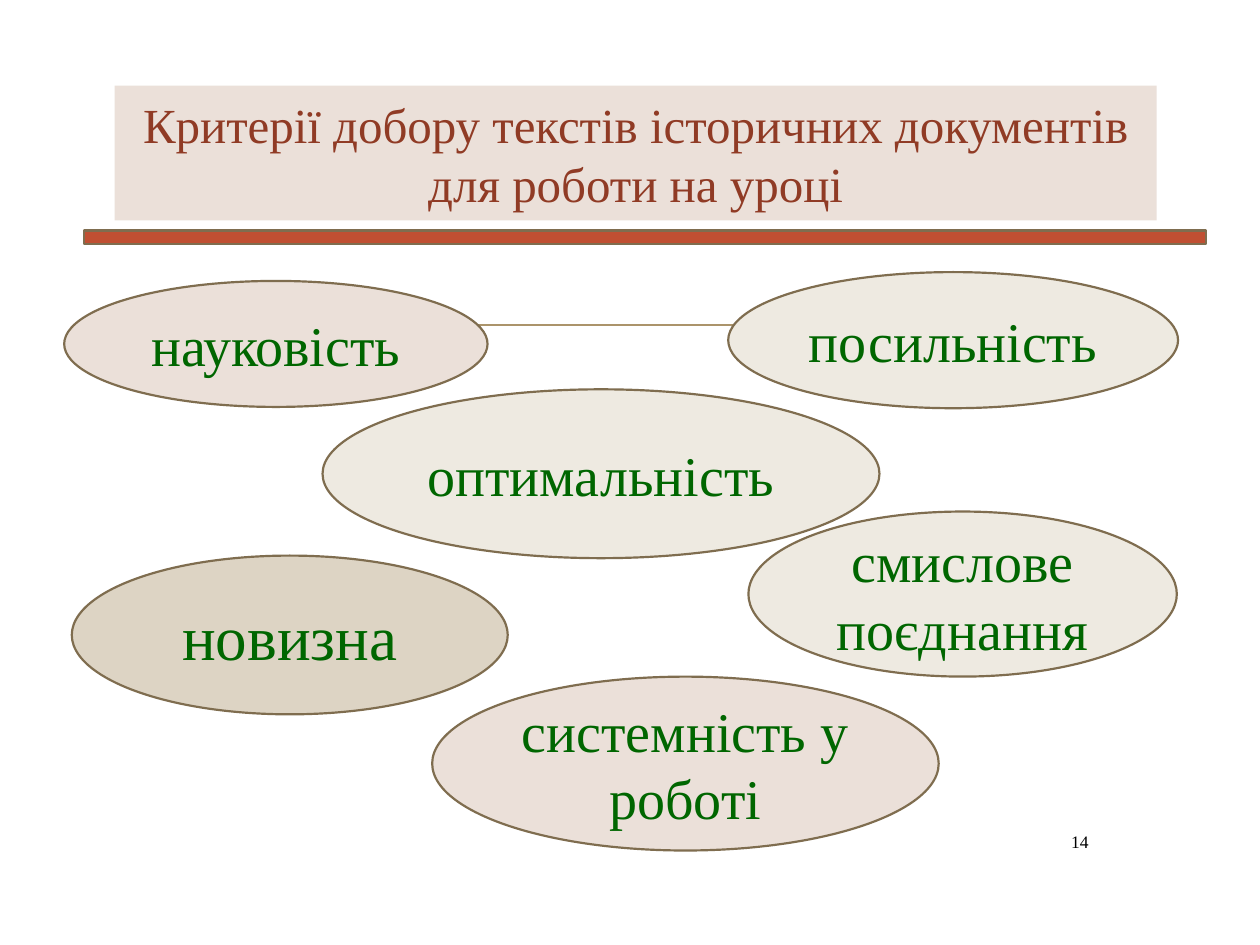
from pptx import Presentation
from pptx.dml.color import RGBColor
from pptx.enum.shapes import MSO_CONNECTOR, MSO_SHAPE
from pptx.enum.text import MSO_ANCHOR, PP_ALIGN
from pptx.oxml.ns import qn
from pptx.util import Inches, Pt
from lxml.etree import SubElement

FONT = "Times New Roman"
ROSE = RGBColor(0xEB, 0xE0, 0xD9)
CREAM = RGBColor(0xEE, 0xEA, 0xE1)
SAND = RGBColor(0xDD, 0xD4, 0xC4)
RUST = RGBColor(0xC0, 0x4F, 0x32)
BROWN = RGBColor(0x7F, 0x6D, 0x4F)
TAN = RGBColor(0xAB, 0x94, 0x6B)
BRICK = RGBColor(0x90, 0x3B, 0x25)
GREEN = RGBColor(0x00, 0x66, 0x00)
BLACK = RGBColor(0x00, 0x00, 0x00)

CRITERIA = [
    ("науковість", (0.51, 2.23, 3.36, 1), ROSE, 32),
    ("посильність", (5.78, 2.16, 3.57, 1.08), CREAM, 32),
    ("новизна", (0.57, 4.41, 3.46, 1.26), SAND, 36),
    ("смислове поєднання", (5.94, 4.06, 3.4, 1.31), CREAM, 32),
    ("оптимальність", (2.56, 3.09, 4.42, 1.34), CREAM, 32),
    ("системність у роботі", (3.43, 5.37, 4.02, 1.38), ROSE, 32),
]


def write(sp, text, size, color, align=PP_ALIGN.CENTER):
    tf = sp.text_frame
    tf.word_wrap = True
    tf.vertical_anchor = MSO_ANCHOR.MIDDLE
    tf.margin_left = tf.margin_right = Inches(0.08)
    p = tf.paragraphs[0]
    p.alignment = align
    r = p.add_run()
    r.text = text
    r.font.name = FONT
    r.font.size = Pt(size)
    r.font.color.rgb = color


def add_text(s, box, text, size, color, align=PP_ALIGN.CENTER):
    sp = s.shapes.add_textbox(*map(Inches, box))
    write(sp, text, size, color, align)
    return sp


def add_outlined(s, kind, box, fill):
    sp = s.shapes.add_shape(kind, *map(Inches, box))
    sp.shadow.inherit = False
    sp.fill.solid()
    sp.fill.fore_color.rgb = fill
    sp.line.color.rgb = BROWN
    sp.line.width = Pt(1.25)
    return sp


def add_rule(s, left, right, y):
    line = s.shapes.add_connector(
        MSO_CONNECTOR.STRAIGHT, Inches(left), Inches(y), Inches(right), Inches(y))
    line.line.color.rgb = TAN
    line.line.width = Pt(1.25)
    SubElement(line._element.spPr, qn("a:effectLst"))


def main():
    """Build the slide on criteria for choosing historical texts."""
    prs = Presentation()
    prs.slide_width, prs.slide_height = Inches(10), Inches(7.5)
    s = prs.slides.add_slide(prs.slide_layouts[6])

    add_rule(s, 1.4, 8.61, 2.58)
    title = add_text(s, (0.91, 0.68, 8.27, 1.07),
                     "Критерії добору текстів історичних документів для роботи на уроці",
                     28, BRICK)
    title.fill.solid()
    title.fill.fore_color.rgb = ROSE
    add_text(s, (8.29, 6.52, 0.43, 0.31), "14", 10, BLACK, PP_ALIGN.RIGHT)
    add_outlined(s, MSO_SHAPE.RECTANGLE, (0.67, 1.83, 8.9, 0.11), RUST)
    for text, box, fill, size in CRITERIA:
        write(add_outlined(s, MSO_SHAPE.OVAL, box, fill), text, size, GREEN)

    prs.save("out.pptx")


if __name__ == "__main__":
    main()
